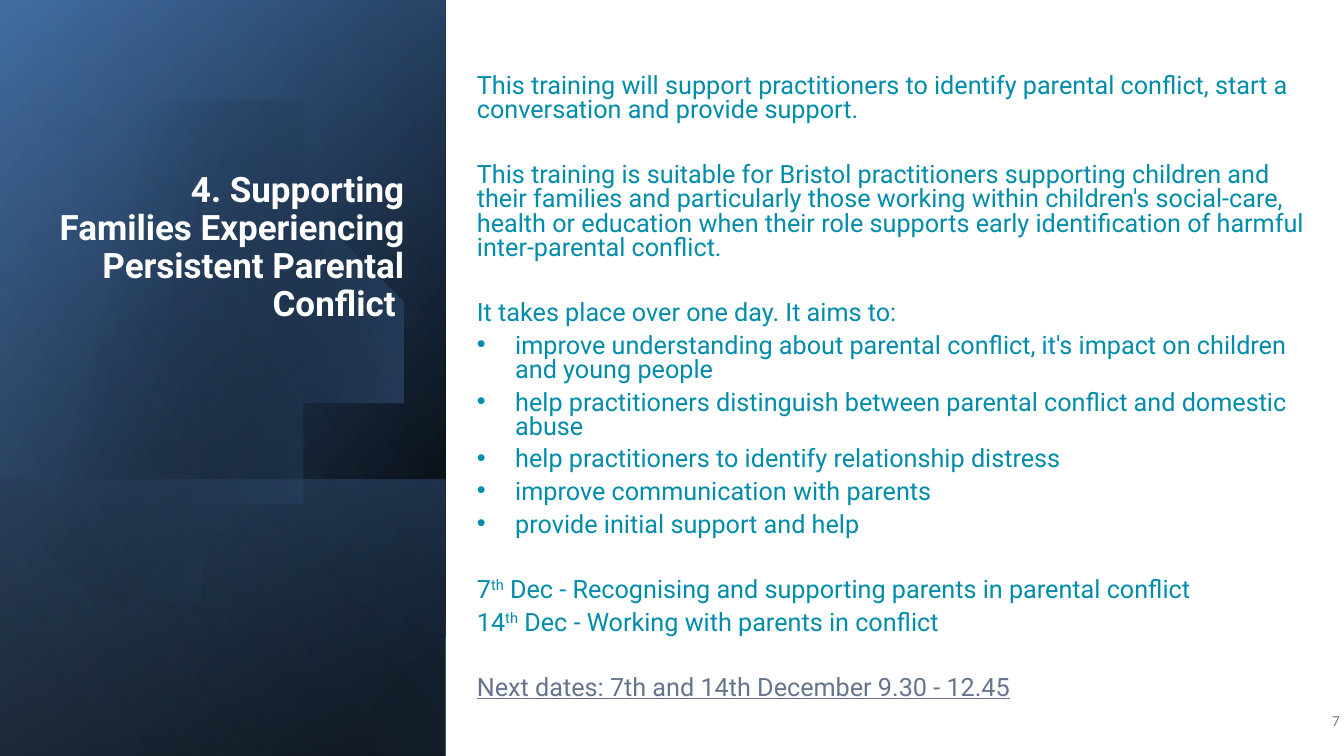
from pptx import Presentation
from pptx.dml.color import RGBColor
from pptx.enum.shapes import MSO_SHAPE
from pptx.enum.text import MSO_ANCHOR, MSO_AUTO_SIZE, PP_ALIGN
from pptx.oxml import parse_xml
from pptx.oxml.ns import nsdecls, qn
from pptx.util import Inches, Pt

TITLE = "4. Supporting Families Experiencing Persistent Parental Conflict\u00a0".replace("\u00a0", chr(160))
BODY = [
    ("intro", ["This training will support practitioners to identify parental conflict, "
               "start a conversation and provide support."]),
    ("section", ["This training is suitable for Bristol practitioners supporting children and "
                 "their families and particularly those working within children's social-care, "
                 "health or education when their role supports early identification of harmful "
                 "inter-parental conflict."]),
    ("section", ["It takes place over one day. It aims to:"]),
    ("bullet", ["improve understanding about parental conflict, it's impact on children "
                "and young people"]),
    ("bullet", ["help practitioners distinguish between parental conflict and domestic abuse"]),
    ("bullet", ["help practitioners to identify relationship distress"]),
    ("bullet", ["improve communication with parents"]),
    ("bullet", ["provide initial support and help"]),
    ("section", ["7", "th", " Dec - Recognising and supporting parents in parental conflict"]),
    ("intro", ["14", "th", " Dec - Working with parents in conflict"]),
    ("dates", ["Next dates: 7th and 14th December 9.30 - 12.45"]),
]
PAGE = "7"

THEME = {
    "font": "Roboto", "page_font": "Calibri",
    "title": "FFFFFF", "body": "008CAB", "dates": "66758C", "page": "808080",
    "title_size": 25, "body_size": 18, "page_size": 11,
    "black": "000000", "navy": "376092", "blue": "4F81BD", "pale": "95B3D7",
}
W, H = 13.33, 7.5
PANEL_W, FOOT_H = 4.42, 2.74
SECTION_GAP = 23.3

BASE = ((8, "black", 100), (100, "navy", 100)), 50
GLOW = ((0, "black", 0), (99, "blue", 46)), 30
FOOT = ((2, "blue", 29), (100, "black", 30)), 130
DISC = ((29, "black", 0), (100, "blue", 43)), 14
VEIL = ((0, "black", 0), (99, "pale", 11)), 120

DISC_START = (1.49, 1.1)
DISC_CURVES = [
    [(2.46, 1.12), (3.35, 1.77), (3.63, 2.75)],
    [(3.98, 3.97), (3.28, 5.23), (2.07, 5.58)],
    [(1.31, 5.8), (0.53, 5.61), (0, 5.16)],
    [(0, 4), (0, 2.8), (0, 1.61)],
    [(0.23, 1.42), (0.5, 1.28), (0.8, 1.19)],
    [(1.03, 1.13), (1.26, 1.1), DISC_START],
]
CURVE_STEPS = 16


def set_all(obj, values):
    for name, value in values.items():
        setattr(obj, name, value)


def paint(sp, stops, angle):
    sp.shadow.inherit = False
    sp.line.fill.background()
    sp.fill.background()
    gs = "".join(
        f'<a:gs pos="{pos * 1000}"><a:srgbClr val="{THEME[color]}">'
        f'<a:alpha val="{alpha * 1000}"/></a:srgbClr></a:gs>'
        for pos, color, alpha in stops)
    grad = parse_xml(
        f'<a:gradFill {nsdecls("a")} rotWithShape="1"><a:gsLst>{gs}</a:gsLst>'
        f'<a:lin ang="{angle * 60000}" scaled="0"/></a:gradFill>')
    spPr = sp._element.spPr
    spPr.replace(spPr.find(qn("a:noFill")), grad)


def add_panel(shapes, top, height, fill):
    left = (PANEL_W - height) / 2
    y = top + (height - PANEL_W) / 2
    sp = shapes.add_shape(MSO_SHAPE.RECTANGLE, Inches(left), Inches(y),
                          Inches(height), Inches(PANEL_W))
    sp.rotation = 90
    sp._element.spPr.xfrm.set("flipH", "1")
    paint(sp, *fill)


def disc_points():
    start = DISC_START
    for c1, c2, end in DISC_CURVES:
        for i in range(1, CURVE_STEPS + 1):
            t = i / CURVE_STEPS
            u = 1 - t
            yield tuple(u**3 * a + 3 * u * u * t * b + 3 * u * t * t * c + t**3 * d
                        for a, b, c, d in zip(start, c1, c2, end))
        start = end


def add_disc(shapes):
    builder = shapes.build_freeform(*DISC_START, scale=Inches(1))
    builder.add_line_segments(list(disc_points()), close=True)
    paint(builder.convert_to_shape(), *DISC)


def place(sp, box, anchor, bottom=0):
    set_all(sp, dict(zip(("left", "top", "width", "height"), map(Inches, box))))
    tf = sp.text_frame
    set_all(tf, {"word_wrap": True, "auto_size": MSO_AUTO_SIZE.NONE,
                 "vertical_anchor": anchor, "margin_left": 0, "margin_right": 0,
                 "margin_top": 0, "margin_bottom": Inches(bottom)})
    return tf


def add_run(p, text, role, size, font="font", **extra):
    r = p.add_run()
    r.text = text
    set_all(r.font, {"name": THEME[font], "size": Pt(THEME[size]), **extra})
    r.font.color.rgb = RGBColor.from_string(THEME[role])
    return r


def fill_body(tf):
    for i, (kind, parts) in enumerate(BODY):
        p = tf.paragraphs[0] if i == 0 else tf.add_paragraph()
        gap = SECTION_GAP if kind in ("section", "dates") else 0
        set_all(p, {"alignment": PP_ALIGN.LEFT, "line_spacing": 0.8,
                    "space_before": Pt(gap), "space_after": Pt(6)})
        pPr = p._p.get_or_add_pPr()
        indent = Inches(0.38) if kind == "bullet" else 0
        pPr.set("marL", str(indent))
        pPr.set("indent", str(-indent))
        bullet = '<a:buChar {} char="•"/>' if kind == "bullet" else "<a:buNone {}/>"
        pPr.append(parse_xml(bullet.format(nsdecls("a"))))
        for text in parts:
            r = add_run(p, text, "dates" if kind == "dates" else "body", "body_size",
                        underline=kind == "dates")
            if text == "th":
                r._r.get_or_add_rPr().set("baseline", "30000")


def main():
    prs = Presentation()
    set_all(prs, {"slide_width": Inches(W), "slide_height": Inches(H)})
    s = prs.slides.add_slide(prs.slide_layouts[1])
    title, body = s.placeholders
    shapes = s.shapes

    add_panel(shapes, 0, H, BASE)
    add_panel(shapes, 0, H, GLOW)
    add_panel(shapes, H - FOOT_H, FOOT_H, FOOT)
    add_disc(shapes)
    add_panel(shapes, 0, H, VEIL)
    for sp in (title, body):
        shapes._spTree.append(sp._element)

    p = place(title, (0.51, 0.64, 3.5, 3.7), MSO_ANCHOR.BOTTOM, 1.13).paragraphs[0]
    set_all(p, {"alignment": PP_ALIGN.RIGHT, "line_spacing": 0.9})
    add_run(p, TITLE, "title", "title_size", bold=True)

    fill_body(place(body, (4.73, 0.56, 8.27, 6.9), MSO_ANCHOR.MIDDLE, 0.32))

    page = shapes.add_textbox(0, 0, 0, 0)
    p = place(page, (12.8, 7.06, 0.49, 0.4), MSO_ANCHOR.TOP).paragraphs[0]
    p.alignment = PP_ALIGN.RIGHT
    add_run(p, PAGE, "page", "page_size", "page_font")

    prs.save("out.pptx")


if __name__ == "__main__":
    main()
